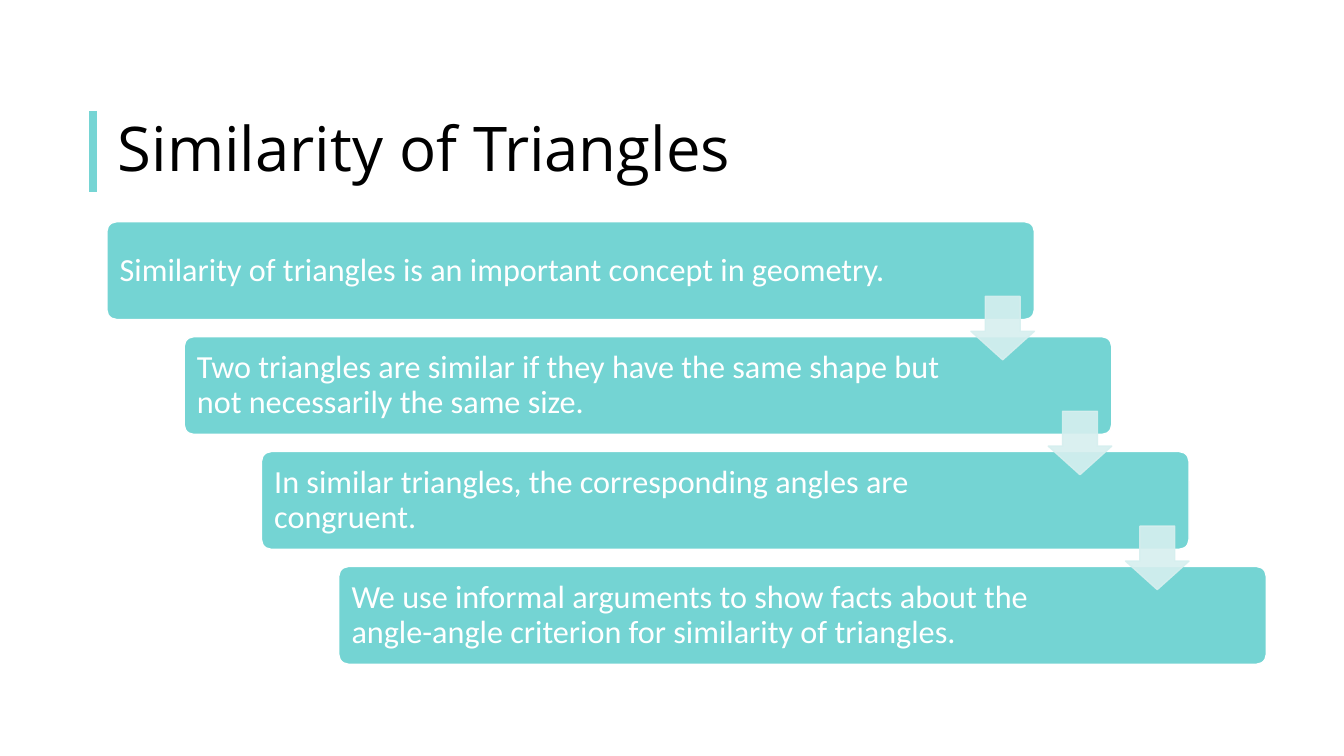
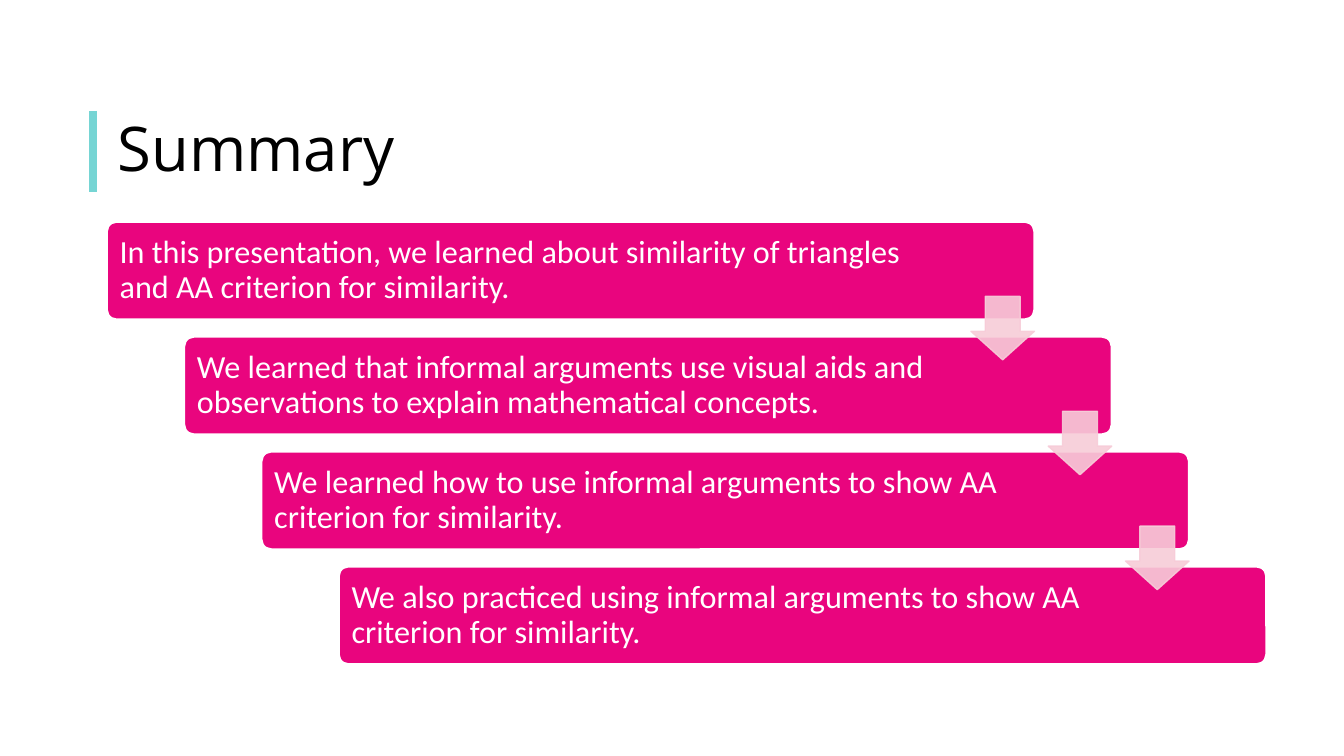
from dataclasses import dataclass

from lxml import etree
from pptx import Presentation
from pptx.dml.color import RGBColor
from pptx.enum.shapes import MSO_CONNECTOR, MSO_SHAPE
from pptx.enum.text import MSO_ANCHOR, PP_ALIGN
from pptx.oxml.ns import qn
from pptx.shapes.autoshape import Shape
from pptx.slide import Slide
from pptx.text.text import TextFrame
from pptx.util import Inches, Pt

STRAIGHT = MSO_CONNECTOR.STRAIGHT
ROUNDED_RECTANGLE = MSO_SHAPE.ROUNDED_RECTANGLE
DOWN_ARROW = MSO_SHAPE.DOWN_ARROW
MIDDLE = MSO_ANCHOR.MIDDLE
LEFT = PP_ALIGN.LEFT

WHITE = RGBColor(0xFF, 0xFF, 0xFF)
BLACK = RGBColor(0x00, 0x00, 0x00)
ACCENT = RGBColor(0x76, 0xD5, 0xD4)
TEAL = RGBColor(0x74, 0xD4, 0xD3)
PALE_TEAL = RGBColor(0xD6, 0xEF, 0xEF)
PINK = RGBColor(0xE9, 0x05, 0x7E)
PALE_PINK = RGBColor(0xF7, 0xCC, 0xD8)

TITLE_FONT = "Open Sans"
BODY_FONT = "Calibri"
ARROW_ALPHA = 90

# Staircase geometry, in inches
FIRST_LEFT, LAST_LEFT = 1.06, 3.36
FIRST_TOP, STEP_DOWN = 2.2, 1.14
STEP_WIDTH, STEP_HEIGHT = 9.2, 0.97
ARROW_SIZE, ARROW_DROP = 0.63, 0.74
FIRST_RIGHT_INSET, RIGHT_INSET = 1.16, 1.49


@dataclass(frozen=True)
class Staircase:
    title: str
    fill: RGBColor
    arrow_fill: RGBColor
    outline_width: float
    steps: tuple[str, ...]


STAIRCASES = (
    Staircase(
        "Similarity of Triangles", TEAL, PALE_TEAL, 1,
        (
            "Similarity of triangles is an important concept in geometry.",
            "Two triangles are similar if they have the same shape but not necessarily the same size.",
            "In similar triangles, the corresponding angles are congruent.",
            "We use informal arguments to show facts about the angle-angle criterion for similarity of triangles.",
        ),
    ),
    Staircase(
        "Summary", PINK, PALE_PINK, 1.5,
        (
            "In this presentation, we learned about similarity of triangles and AA criterion for similarity.",
            "We learned that informal arguments use visual aids and observations to explain mathematical concepts.",
            "We learned how to use informal arguments to show AA criterion for similarity.",
            "We also practiced using informal arguments to show AA criterion for similarity.",
        ),
    ),
)


def write_text(frame: TextFrame, text: str, font: str, size: float, color: RGBColor) -> None:
    frame.text = text
    frame.word_wrap = True
    frame.vertical_anchor = MIDDLE
    paragraph = frame.paragraphs[0]
    paragraph.alignment = LEFT
    paragraph.line_spacing = 0.9
    run = paragraph.runs[0]
    run.font.name = font
    run.font.size = Pt(size)
    run.font.color.rgb = color


def paint(shape: Shape, fill: RGBColor, outline: RGBColor, outline_width: float) -> None:
    shape.shadow.inherit = False
    shape.fill.solid()
    shape.fill.fore_color.rgb = fill
    shape.line.color.rgb = outline
    shape.line.width = Pt(outline_width)


def set_opacity(shape: Shape, percent: int) -> None:
    """Apply the opacity to both the fill and the outline."""
    for color in shape.element.spPr.iter(qn("a:srgbClr")):
        etree.SubElement(color, qn("a:alpha")).set("val", str(percent * 1000))


def add_title(slide: Slide, title: str) -> None:
    bar = slide.shapes.add_connector(
        STRAIGHT, Inches(0.92), Inches(1.1), Inches(0.92), Inches(1.9)
    )
    bar.line.color.rgb = ACCENT
    bar.line.width = Pt(6)
    etree.SubElement(bar.element.spPr, qn("a:effectLst"))
    box = slide.shapes.add_textbox(Inches(1.07), Inches(1.1), Inches(11.5), Inches(0.8))
    write_text(box.text_frame, title, TITLE_FONT, 44, BLACK)


def add_step(
    slide: Slide, staircase: Staircase, text: str, left: float, top: float, right_inset: float
) -> None:
    step = slide.shapes.add_shape(
        ROUNDED_RECTANGLE, Inches(left), Inches(top), Inches(STEP_WIDTH), Inches(STEP_HEIGHT)
    )
    step.adjustments[0] = 0.1
    paint(step, staircase.fill, WHITE, staircase.outline_width)
    frame = step.text_frame
    frame.margin_left = frame.margin_top = frame.margin_bottom = Inches(0.1)
    frame.margin_right = Inches(right_inset)
    write_text(frame, text, BODY_FONT, 23, WHITE)


def add_arrow(slide: Slide, color: RGBColor, left: float, top: float) -> None:
    arrow = slide.shapes.add_shape(
        DOWN_ARROW, Inches(left), Inches(top), Inches(ARROW_SIZE), Inches(ARROW_SIZE)
    )
    # Head length first, then shaft width
    arrow.adjustments[0] = 0.55
    arrow.adjustments[1] = 0.45
    paint(arrow, color, color, 1)
    set_opacity(arrow, ARROW_ALPHA)


def add_staircase(slide: Slide, staircase: Staircase) -> None:
    step_right = (LAST_LEFT - FIRST_LEFT) / (len(staircase.steps) - 1)
    corners = [
        (FIRST_LEFT + index * step_right, FIRST_TOP + index * STEP_DOWN)
        for index in range(len(staircase.steps))
    ]
    for index, (text, (left, top)) in enumerate(zip(staircase.steps, corners)):
        right_inset = RIGHT_INSET if index else FIRST_RIGHT_INSET
        add_step(slide, staircase, text, left, top, right_inset)
    for left, top in corners[:-1]:
        add_arrow(
            slide, staircase.arrow_fill, left + STEP_WIDTH - ARROW_SIZE, top + ARROW_DROP
        )


def main() -> None:
    presentation = Presentation()
    presentation.slide_width = Inches(13.33)
    presentation.slide_height = Inches(7.5)
    blank_layout = presentation.slide_layouts[6]
    for staircase in STAIRCASES:
        slide = presentation.slides.add_slide(blank_layout)
        add_title(slide, staircase.title)
        add_staircase(slide, staircase)
    presentation.save("out.pptx")


if __name__ == "__main__":
    main()
